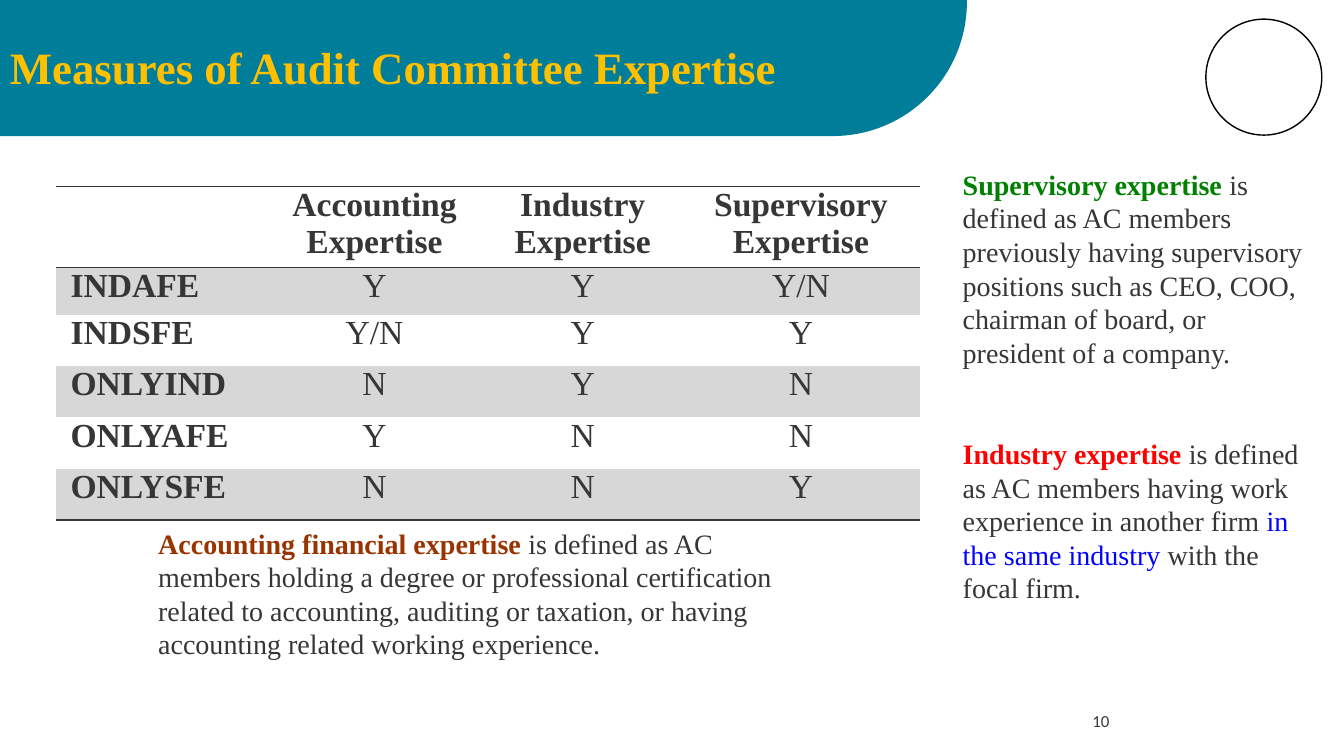
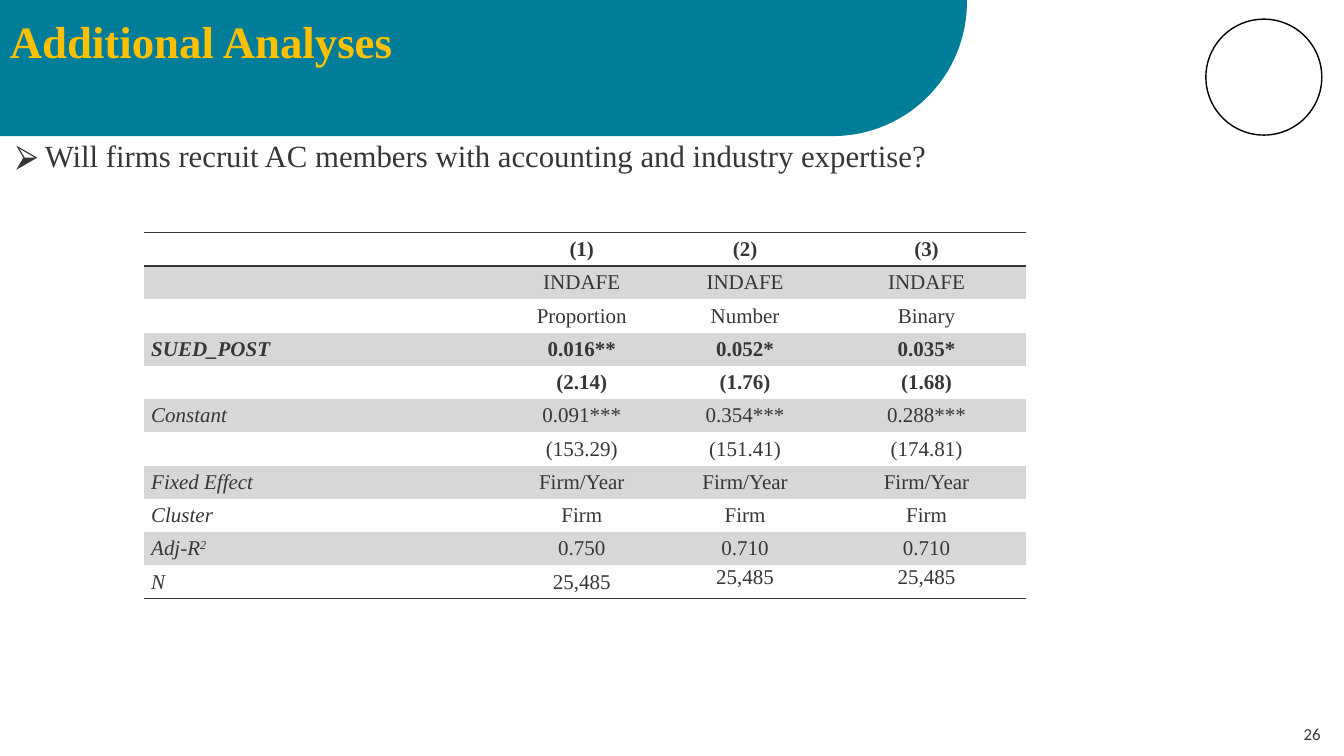
import math

from lxml import etree
from pptx import Presentation
from pptx.dml.color import RGBColor
from pptx.enum.shapes import MSO_SHAPE
from pptx.enum.text import MSO_ANCHOR, PP_ALIGN
from pptx.oxml.ns import qn
from pptx.util import Inches, Pt

CENTER, LEFT, JUSTIFY = PP_ALIGN.CENTER, PP_ALIGN.LEFT, PP_ALIGN.JUSTIFY
TOP, MIDDLE = MSO_ANCHOR.TOP, MSO_ANCHOR.MIDDLE
OVAL = MSO_SHAPE.OVAL
SERIF, SANS = "Times New Roman", "Calibri"
COLORS = {
    "band": "007D98", "title": "FFC000", "text": "373636", "rule": "373636",
    "stripe": "D7D7D7", "ring": "000000", "accounting": "993300",
    "supervisory": "008000", "industry": "FF0000", "emphasis": "0000FF",
}
BAND = (9.59, 1.35)
BAND_RADIUS = 1.33

EXPERTISE_ROWS = [
    ["", "Accounting\nExpertise", "Industry\nExpertise", "Supervisory\nExpertise"],
    ["INDAFE", "Y", "Y", "Y/N"],
    ["INDSFE", "Y/N", "Y", "Y"],
    ["ONLYIND", "N", "Y", "N"],
    ["ONLYAFE", "Y", "N", "N"],
    ["ONLYSFE", "N", "N", "Y"],
]
REGRESSION_ROWS = [
    ["", "(1)", "(2)", "(3)"],
    ["", "INDAFE", "INDAFE", "INDAFE"],
    ["", "Proportion", "Number", "Binary"],
    ["SUED_POST", "0.016**", "0.052*", "0.035*"],
    ["", "(2.14)", "(1.76)", "(1.68)"],
    ["Constant", "0.091***", "0.354***", "0.288***"],
    ["", "(153.29)", "(151.41)", "(174.81)"],
    ["Fixed Effect", "Firm/Year", "Firm/Year", "Firm/Year"],
    ["Cluster", "Firm", "Firm", "Firm"],
    ["Adj-R", "0.750", "0.710", "0.710"],
    ["N", "25,485", "25,485", "25,485"],
]


def rgb(name):
    return RGBColor.from_string(COLORS[name])


def add_run(paragraph, text, size, color="text", bold=False, italic=False, font=SERIF):
    run = paragraph.add_run()
    run.text = text
    run.font.size = Pt(size)
    run.font.name = font
    run.font.bold = bold
    run.font.italic = italic
    run.font.color.rgb = rgb(color)
    return run


def add_text(slide, box, runs, size, anchor=TOP, align=LEFT, font=SERIF, spacing=None):
    shape = slide.shapes.add_textbox(*map(Inches, box))
    frame = shape.text_frame
    frame.word_wrap = True
    frame.vertical_anchor = anchor
    paragraph = frame.paragraphs[0]
    paragraph.alignment = align
    if spacing:
        paragraph.line_spacing = spacing
    for text, color, bold in runs:
        add_run(paragraph, text, size, color, bold, font=font)
    return paragraph


def add_band(slide):
    width, height = BAND
    steps = 40
    angles = [math.pi / 2 * step / steps for step in range(steps + 1)]
    arc = [
        (Inches(width - BAND_RADIUS * (1 - math.cos(angle))),
         Inches(height - BAND_RADIUS * (1 - math.sin(angle))))
        for angle in angles
    ]
    builder = slide.shapes.build_freeform(0, 0)
    builder.add_line_segments([(Inches(width), 0), *arc, (0, Inches(height))], close=True)
    band = builder.convert_to_shape()
    band.shadow.inherit = False
    band.fill.solid()
    band.fill.fore_color.rgb = rgb("band")
    band.line.fill.background()


def add_ring(slide, left, top, size):
    ring = slide.shapes.add_shape(OVAL, *map(Inches, (left, top, size, size)))
    ring.shadow.inherit = False
    ring.fill.background()
    ring.line.color.rgb = rgb("ring")
    ring.line.width = Pt(1)


def add_base_slide(presentation, title, title_box, number, number_box, title_spacing=None):
    slide = presentation.slides.add_slide(presentation.slide_layouts[6])
    add_band(slide)
    add_ring(slide, 11.96, 0.19, 1.15)
    add_text(slide, number_box, [(number, "text", False)], 12, MIDDLE, CENTER, SANS)
    add_text(slide, title_box, [(title, "title", True)], 32, spacing=title_spacing)
    return slide


def set_borders(cell, ruled_edges):
    properties = cell._tc.get_or_add_tcPr()
    for position, edge in enumerate(("lnL", "lnR", "lnT", "lnB")):
        line = etree.Element(qn(f"a:{edge}"), w=str(Pt(1)))
        if edge in ruled_edges:
            fill = etree.SubElement(line, qn("a:solidFill"))
            etree.SubElement(fill, qn("a:srgbClr"), val=COLORS["rule"])
        else:
            etree.SubElement(line, qn("a:noFill"))
        properties.insert(position, line)


def add_ruled_table(slide, left, top, widths, heights, rows, size, margin, anchor, fill_cell):
    box = map(Inches, (left, top, sum(widths), sum(heights)))
    table = slide.shapes.add_table(len(rows), len(widths), *box).table
    for column, width in zip(table.columns, widths):
        column.width = Inches(width)
    for row, height in zip(table.rows, heights):
        row.height = Inches(height)
    for row_index, values in enumerate(rows):
        for column_index, value in enumerate(values):
            cell = table.cell(row_index, column_index)
            cell.margin_left = cell.margin_right = Inches(margin)
            cell.margin_top = cell.margin_bottom = 0
            cell.vertical_anchor = anchor
            if row_index % 2:
                cell.fill.solid()
                cell.fill.fore_color.rgb = rgb("stripe")
            else:
                cell.fill.background()
            edges = {0: ("lnT", "lnB"), 1: ("lnT",), len(rows) - 1: ("lnB",)}
            set_borders(cell, edges.get(row_index, ()))
            if value:
                fill_cell(cell, row_index, column_index, value)
            else:
                cell.text_frame.paragraphs[0].font.size = Pt(size)
    return table


def fill_expertise_cell(cell, row, column, value):
    frame = cell.text_frame
    for index, line in enumerate(value.split("\n")):
        paragraph = frame.add_paragraph() if index else frame.paragraphs[0]
        paragraph.alignment = CENTER if column else JUSTIFY
        add_run(paragraph, line, 24, bold=row == 0 or column == 0)


def fill_regression_cell(cell, row, column, value):
    paragraph = cell.text_frame.paragraphs[0]
    paragraph.alignment = CENTER if column else LEFT
    add_run(paragraph, value, 15, bold=row in (0, 3, 4), italic=column == 0)
    if value == "Adj-R":
        exponent = add_run(paragraph, "2", 15, italic=True)
        exponent.font._element.set("baseline", "30000")


def add_question(slide, box, text):
    paragraph = add_text(slide, box, [], 22, spacing=0.9)
    properties = paragraph._p.get_or_add_pPr()
    properties.set("marL", "0")
    properties.set("indent", str(Inches(-0.15)))
    color = etree.SubElement(properties, qn("a:buClr"))
    etree.SubElement(color, qn("a:srgbClr"), val=COLORS["text"])
    etree.SubElement(properties, qn("a:buFont"), typeface=SERIF)
    etree.SubElement(properties, qn("a:buChar"), char="⮚")
    add_run(paragraph, text, 22)


def build_measures_slide(presentation):
    slide = add_base_slide(
        presentation, "Measures of Audit Committee Expertise", (0, 0.34, 9.26, 0.64),
        "10", (9.42, 6.95, 3, 0.4))
    add_ruled_table(
        slide, 0.56, 1.85, [2.07, 2.17, 1.96, 2.37], [0.6, 0.47] + [0.51] * 4,
        EXPERTISE_ROWS, 24, 0.14, TOP, fill_expertise_cell)
    definitions = [
        ((1.47, 5.17, 6.75, 1.45), [
            ("Accounting financial expertise ", "accounting", True),
            ("is defined as AC members holding a degree or professional certification "
             "related to accounting, auditing or taxation, or having accounting related "
             "working experience.", "text", False)]),
        ((9.45, 1.61, 3.59, 2.12), [
            ("Supervisory expertise ", "supervisory", True),
            ("is defined as AC members previously having supervisory positions such as "
             "CEO, COO, chairman of board, or president of a company.", "text", False)]),
        ((9.45, 4.28, 3.53, 1.78), [
            ("Industry expertise ", "industry", True),
            ("is defined as AC members having work experience in another firm ", "text", False),
            ("in the same industry", "emphasis", False),
            (" with the focal firm.", "text", False)]),
    ]
    for box, runs in definitions:
        add_text(slide, box, runs, 20)


def build_analyses_slide(presentation):
    slide = add_base_slide(
        presentation, "Additional Analyses", (0, 0.15, 8.5, 0.92),
        "26", (12.7, 7.15, 0.63, 0.27), 0.9)
    add_question(
        slide, (0.06, 1.35, 12.78, 0.59),
        " Will firms recruit AC members with accounting and industry expertise?")
    table = add_ruled_table(
        slide, 1.43, 2.31, [3.53, 1.62, 1.62, 1.98], [0.33] * len(REGRESSION_ROWS),
        REGRESSION_ROWS, 15, 0.07, MIDDLE, fill_regression_cell)
    for column in (2, 3):
        table.cell(len(REGRESSION_ROWS) - 1, column).vertical_anchor = TOP


def main():
    presentation = Presentation()
    presentation.slide_width = Inches(13.33)
    presentation.slide_height = Inches(7.5)
    build_measures_slide(presentation)
    build_analyses_slide(presentation)
    presentation.save("out.pptx")


if __name__ == "__main__":
    main()
